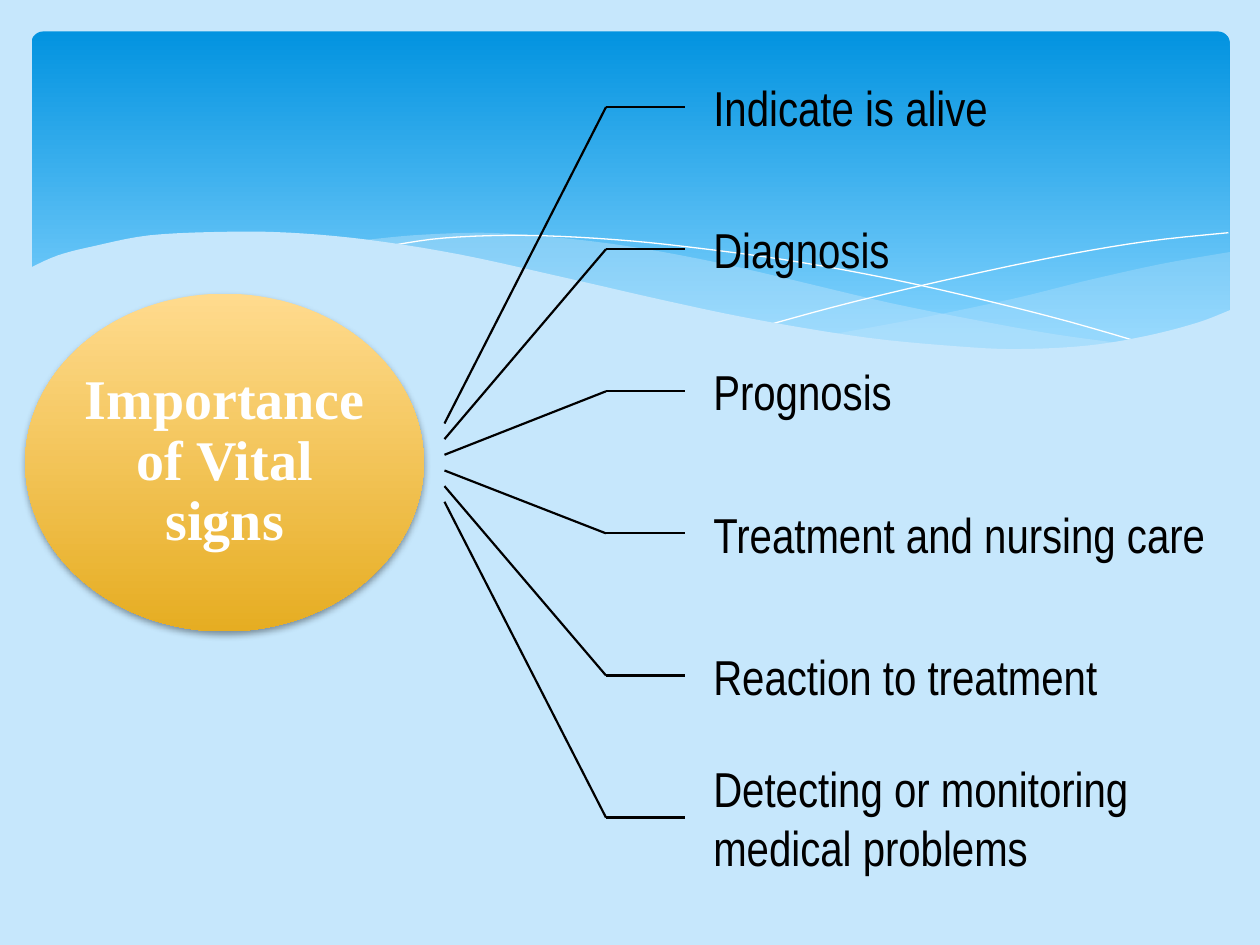
"""Build a slide that fans six reasons out from a hub on vital signs."""
from dataclasses import dataclass

from lxml.etree import SubElement
from pptx import Presentation
from pptx.dml.color import RGBColor as Rgb
from pptx.enum.shapes import MSO_CONNECTOR as Link, MSO_SHAPE as Kind
from pptx.enum.text import MSO_ANCHOR as Anchor, PP_ALIGN as Align
from pptx.oxml.ns import qn
from pptx.util import Pt

SKY = Rgb(0xC6, 0xE7, 0xFC)
DEEP = Rgb(0x02, 0x93, 0xE0)
PALE = Rgb(0x83, 0xD3, 0xFE)
CREAM = Rgb(0xFF, 0xDB, 0x8E)
GOLD = Rgb(0xE6, 0xAD, 0x22)
WHITE = Rgb(0xFF, 0xFF, 0xFF)
BLACK = Rgb(0, 0, 0)

Point = tuple[float, float]
Edge = tuple[Point, ...]


@dataclass(frozen=True)
class Wave:
    """A band of smooth edges, or a thin white curve if alpha is None."""
    edges: tuple[Edge, ...]
    alpha: int | None = None


@dataclass(frozen=True)
class Ray:
    """One reason with the height of its line's tip and of its row."""
    label: str
    tip: float
    row: float


WAVES = (
    Wave((((703, 144), (663, 151), (620, 160.6), (580, 170.5), (525, 182), (476, 191)),
          ((476, 191), (508, 195), (545, 198.5), (578, 200), (621, 198),
           (657, 192), (683, 185), (703, 178))), 29),
    Wave((((206, 137.5), (246, 143.5), (291, 152), (353.5, 167), (407.5, 178.5),
           (456.5, 188), (500.5, 194.5), (538.5, 198.5), (581, 200),
           (617, 199.5), (643, 196.5)),
          ((643, 196.5), (602.5, 191), (558, 183), (508, 173), (453, 160),
           (409.5, 150), (370, 142.5), (335, 137.5), (302.5, 134.5),
           (273.5, 133), (236, 134.5), (206, 137.5))), 40),
    Wave((((222.5, 140.5), (254, 136), (299.5, 134.5), (352, 137), (400.5, 142),
           (458, 150), (523.5, 162.5), (598.5, 180.5), (653, 196)),)),
    Wave((((441.5, 185), (484, 173.5), (538.5, 160.5), (602, 147),
           (655, 138), (702, 133)),)),
    Wave((((16.5, 153.5), (33, 146), (54.5, 140.5), (85.5, 134.5), (127.5, 132.5),
           (165.5, 133), (210, 137), (263, 145.5), (322, 158.5), (381, 172),
           (434, 183), (495.5, 193), (548, 198), (582.5, 199.5), (621.5, 197.5),
           (655, 192), (684, 184.5), (703.5, 177)),
          ((703.5, 237), (16.5, 237))), 100),
)
LABELS = ("Indicate is alive", "Diagnosis", "Prognosis",
          "Treatment and nursing care", "Reaction to treatment",
          "Detecting or monitoring medical problems")
STEP = 81.2
RAYS = [Ray(label, 242 + 8.95 * i, 61.2 + STEP * i) for i, label in enumerate(LABELS)]
TIP_X, BEND_X, TEXT_X = 254, 346.3, 391.6


def smooth(edge: Edge, parts: int = 5) -> list[Point]:
    """Return points on a Catmull-Rom curve through the edge."""
    if len(edge) < 3:
        return list(edge)
    ends = (edge[0], *edge, edge[-1])
    curve = [edge[0]]
    for a, b, c, d in zip(ends, ends[1:], ends[2:], ends[3:]):
        for t in (n / parts for n in range(1, parts + 1)):
            x, y = (b[k] + t / 2 * (c[k] - a[k]
                    + t * (2 * a[k] - 5 * b[k] + 4 * c[k] - d[k])
                    + t * t * (3 * b[k] - a[k] - 3 * c[k] + d[k])) for k in (0, 1))
            curve.append((x, y))
    return curve


def draw_wave(shapes, wave: Wave) -> None:
    """Draw a wave as a filled band or an open curve."""
    dots = [(Pt(x), Pt(y)) for edge in wave.edges for x, y in smooth(edge)]
    band = wave.alpha is not None
    pen = shapes.build_freeform(*dots[0])
    pen.add_line_segments(dots[1:], close=band)
    shape = pen.convert_to_shape()
    shape.shadow.inherit = False
    if not band:
        shape.fill.background()
        shape.line.color.rgb = WHITE
        shape.line.width = Pt(0)
        return
    shape.line.fill.background()
    shape.fill.solid()
    shape.fill.fore_color.rgb = SKY
    if wave.alpha < 100:
        tone = shape.element.spPr.find(".//" + qn("a:srgbClr"))
        SubElement(tone, qn("a:alpha"), val=str(wave.alpha * 1000))


def draw_blend(shapes, kind: Kind, box: tuple, top: Rgb, base: Rgb, end: float = 1):
    """Draw a shape that blends downwards between two colours."""
    shape = shapes.add_shape(kind, *map(Pt, box))
    shape.shadow.inherit = False
    shape.line.fill.background()
    shape.fill.gradient()
    shape.fill.gradient_angle = 270
    for stop, tone, spot in zip(shape.fill.gradient_stops, (top, base), (0, end)):
        stop.color.rgb = tone
        stop.position = spot
    return shape


def add_glow(shape) -> None:
    """Cast a soft shadow below the shape."""
    list_tag = shape.element.spPr.find(qn("a:effectLst"))
    cast = SubElement(list_tag, qn("a:outerShdw"), blurRad=str(Pt(4)),
                      dist=str(Pt(2)), dir="5400000", rotWithShape="0")
    tone = SubElement(cast, qn("a:srgbClr"), val="000000")
    SubElement(tone, qn("a:alpha"), val="38000")


def write(shapes, text: str, box: tuple, *, font: str, size: float, color: Rgb,
          bold: bool = False, align: Align = Align.LEFT, inset: float = 0,
          space: float = 1):
    """Write text, centred in height, in a new box."""
    shape = shapes.add_textbox(*map(Pt, box))
    frame = shape.text_frame
    frame.word_wrap = True
    frame.vertical_anchor = Anchor.MIDDLE
    frame.margin_left = frame.margin_right = Pt(inset)
    frame.margin_top = frame.margin_bottom = Pt(inset)
    para = frame.paragraphs[0]
    para.alignment = align
    para.line_spacing = space
    run = para.add_run()
    run.text = text
    run.font.name, run.font.size, run.font.bold = font, Pt(size), bold
    run.font.color.rgb = color
    return shape


def draw_line(shapes, start: Point, end: Point):
    """Draw a thin black line."""
    line = shapes.add_connector(Link.STRAIGHT, *map(Pt, (*start, *end)))
    line.line.color.rgb = BLACK
    line.line.width = Pt(1.25)
    SubElement(line.element.spPr, qn("a:effectLst"))
    return line


def draw_ray(shapes, ray: Ray) -> None:
    """Draw a reason and the bent line that leads to it."""
    box = write(shapes, ray.label, (TEXT_X, ray.row - STEP / 2, 320, STEP),
                font="Arial Narrow", size=28, color=BLACK, inset=16)
    bend = (BEND_X, ray.row)
    draw_line(shapes, (TIP_X, ray.tip), bend)
    draw_line(shapes, bend, (TEXT_X, ray.row)).end_connect(box, 1)


def main() -> None:
    """Build and save the slide."""
    deck = Presentation()
    deck.slide_width, deck.slide_height = Pt(720), Pt(540)
    slide = deck.slides.add_slide(deck.slide_layouts[6])
    slide.background.fill.solid()
    slide.background.fill.fore_color.rgb = SKY
    shapes = slide.shapes
    panel = draw_blend(shapes, Kind.ROUNDED_RECTANGLE, (18, 18, 684.7, 194.4),
                       DEEP, PALE, 0.9)
    panel.adjustments[0] = 0.034
    for wave in WAVES:
        draw_wave(shapes, wave)
    add_glow(draw_blend(shapes, Kind.OVAL, (14.4, 167.8, 227.8, 193), CREAM, GOLD))
    write(shapes, "Importance of Vital signs", (48, 196, 161, 136),
          font="Times New Roman", size=32, color=WHITE, bold=True,
          align=Align.CENTER, space=0.9)
    for ray in RAYS:
        draw_ray(shapes, ray)
    deck.save("out.pptx")


if __name__ == "__main__":
    main()
